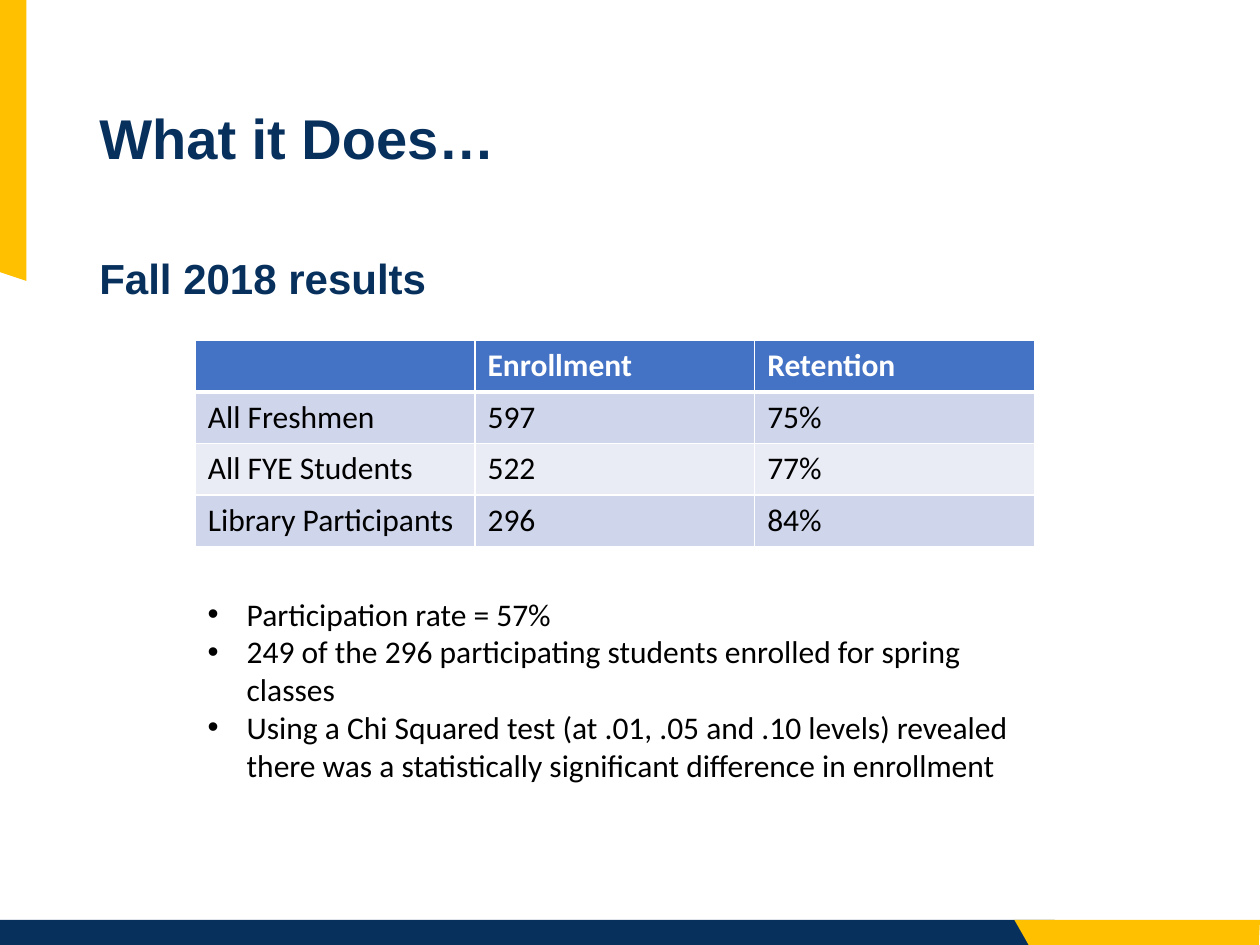
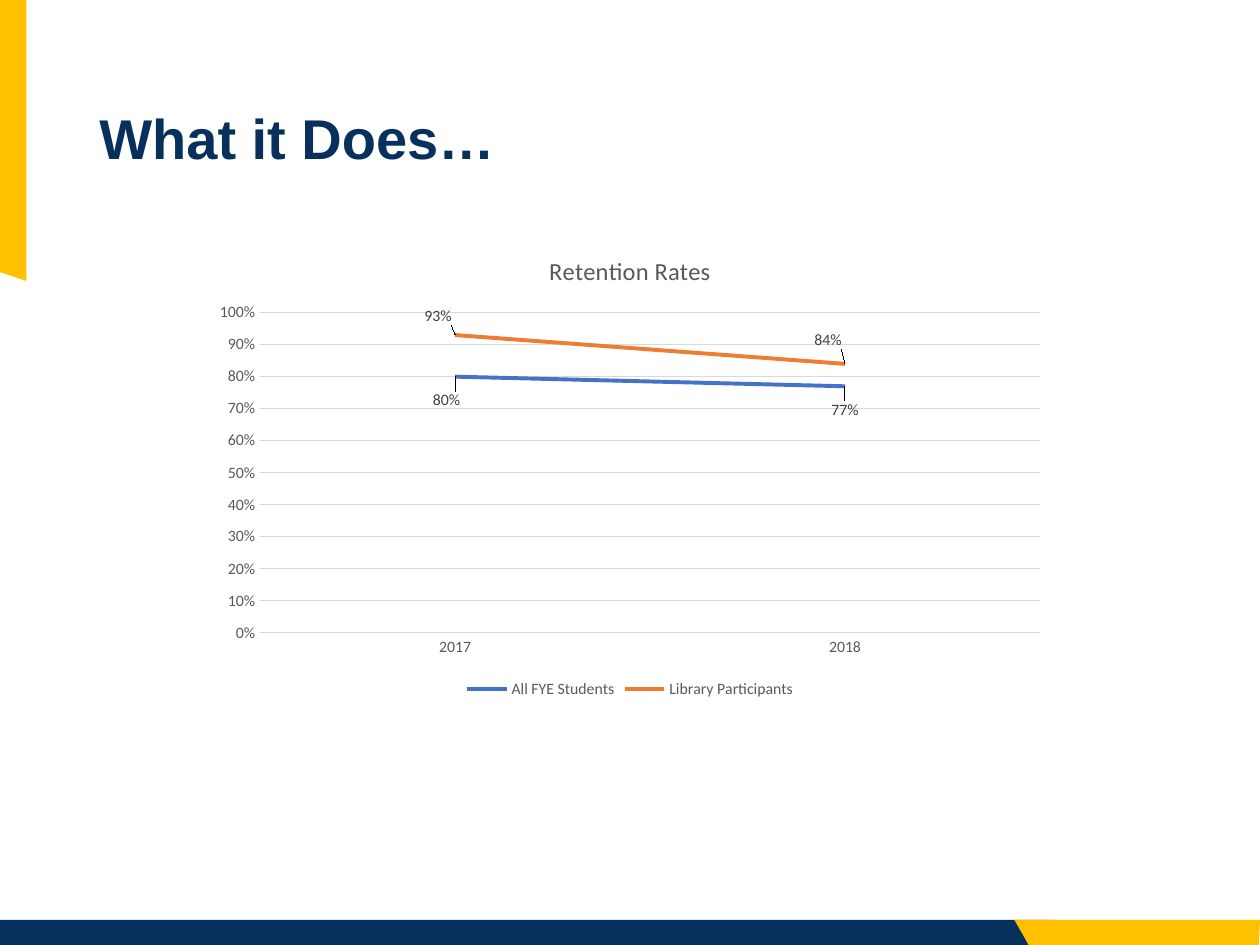
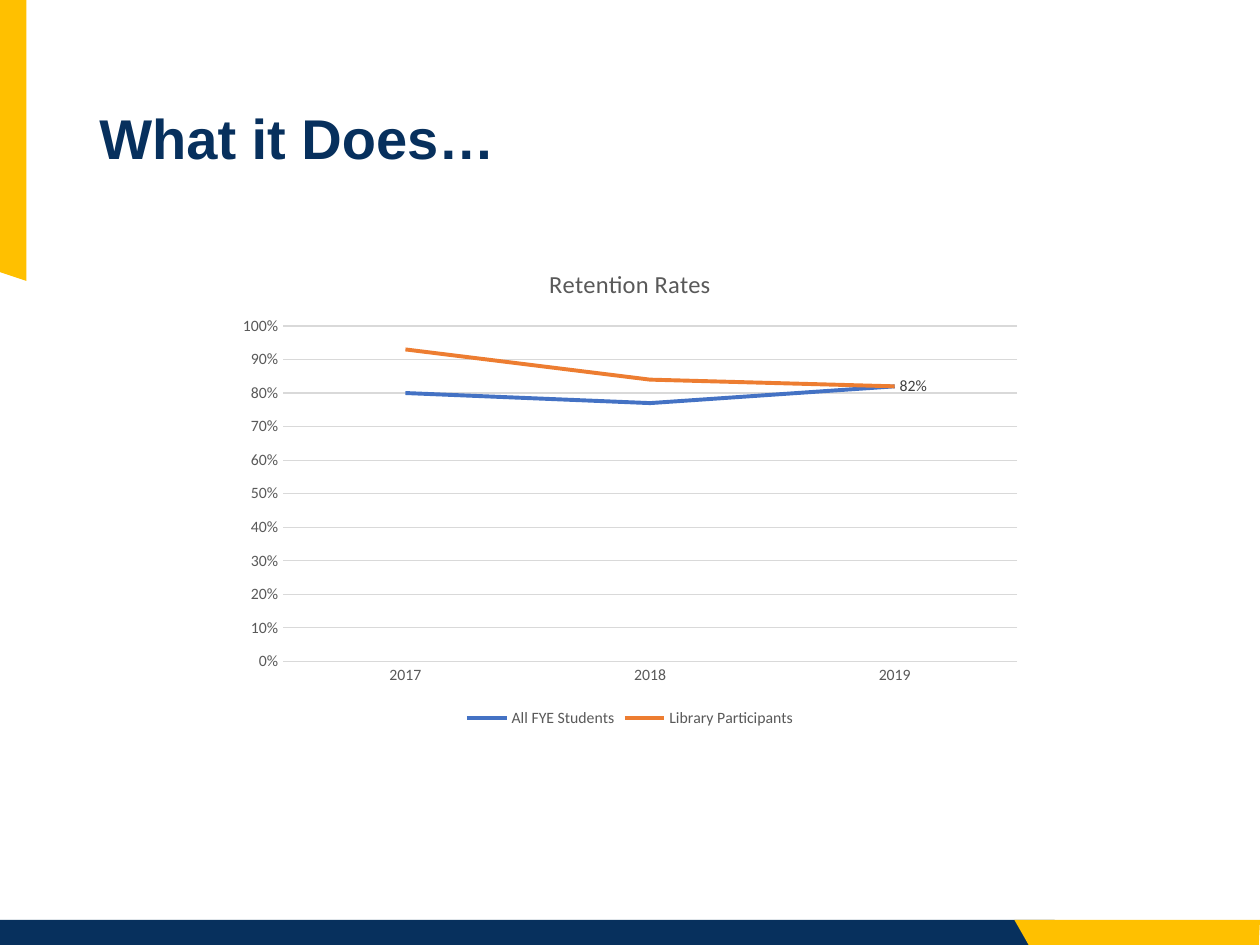
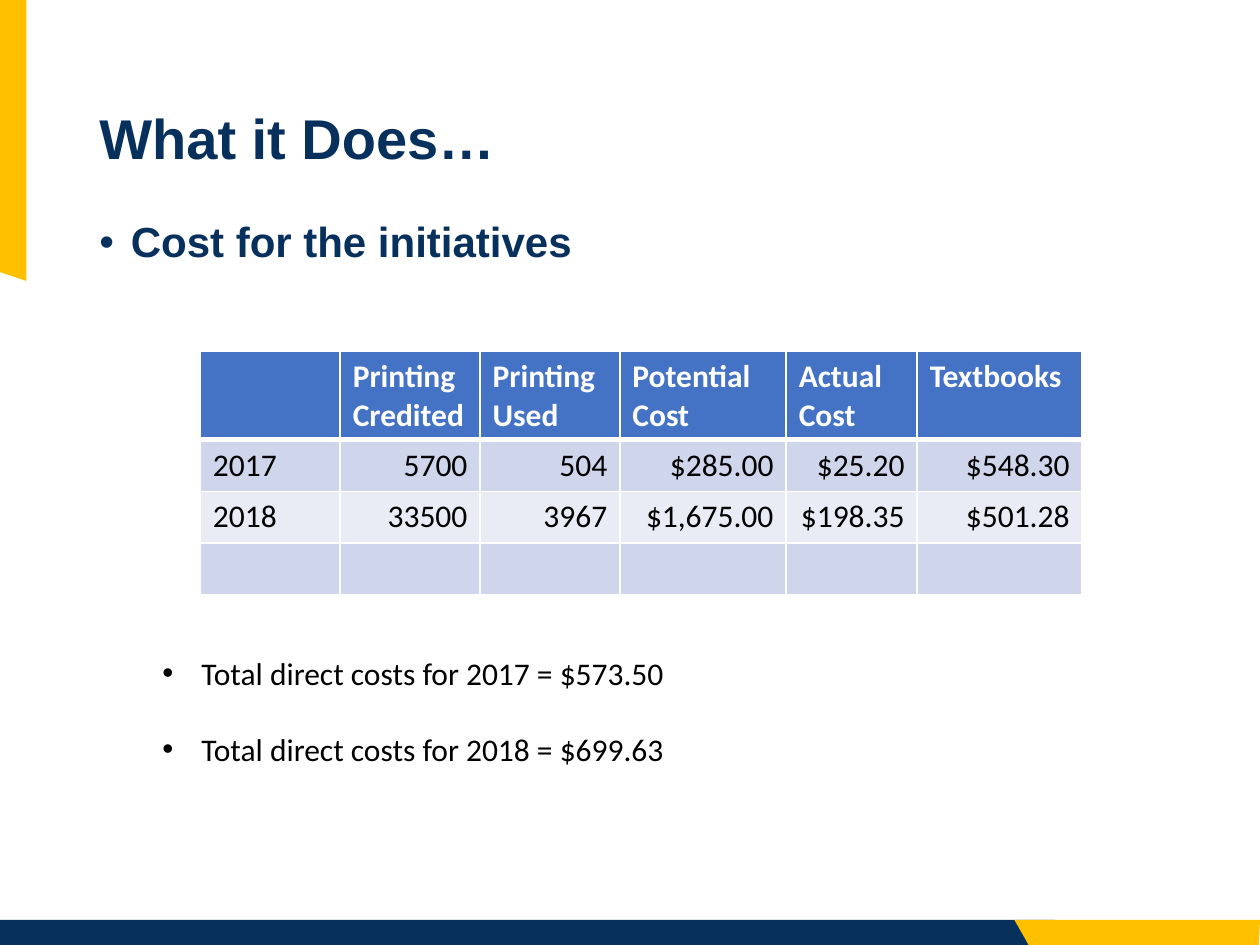
from lxml import etree
from pptx import Presentation
from pptx import util as u
from pptx.chart.data import CategoryChartData
from pptx.dml.color import RGBColor
from pptx.enum import chart as charts, shapes, text
from pptx.oxml import ns

Inches, Pt = u.Inches, u.Pt

NAVY, GOLD, WHITE, BLACK = "07305D", "FFC000", "FFFFFF", "000000"
BLUE, ORANGE, GRID, AXIS_TEXT, LABEL_TEXT = "4472C4", "ED7D31", "D9D9D9", "595959", "404040"
BODY_FILLS = ["CFD5EA", "E9EBF5"]

TITLE = {"name": "Arial", "size": 32, "bold": True, "color": NAVY}
SUBTITLE = {**TITLE, "size": 24}
BODY = {"name": "Calibri", "size": 18, "bold": False, "color": BLACK}
HEADER = {**BODY, "bold": True, "color": WHITE}
CHART_TITLE = {"name": "Calibri", "size": 14, "bold": False, "color": AXIS_TEXT}
AXIS = {**CHART_TITLE, "size": 9}
LABEL = {**AXIS, "color": LABEL_TEXT}

TITLE_TEXT = "What it Does…"
TITLE_BOX = (0.69, 0.4, 8.62, 1.45)
FOOTER_BAND = (0, 7.3, 8.37, 0.21)
GOLD_OUTLINES = [
    [(9.99, 7.51), (8.17, 7.51), (8.05, 7.3), (10, 7.3)],
    [(0, 0), (0.21, 0), (0.21, 2.23), (0, 2.16)],
]

RESULTS = [
    ["", "Enrollment", "Retention"],
    ["All Freshmen", "597", "75%"],
    ["All FYE Students", "522", "77%"],
    ["Library Participants", "296", "84%"],
]
RESULT_NOTES = [
    "Participation rate = 57%",
    "249 of the 296 participating students enrolled for spring classes",
    "Using a Chi Squared test (at .01, .05 and .10 levels) revealed there was "
    "a statistically significant difference in enrollment",
]
COSTS = [
    ["", "Printing Credited", "Printing Used", "Potential Cost", "Actual Cost", "Textbooks"],
    ["2017", "5700", "504", "$285.00", "$25.20", "$548.30"],
    ["2018", "33500", "3967", "$1,675.00", "$198.35", "$501.28"],
    [""] * 6,
]
COST_NOTES = [
    "Total direct costs for 2017 = $573.50",
    "Total direct costs for 2018 = $699.63",
]

ABOVE, BELOW, RIGHT = (getattr(charts.XL_LABEL_POSITION, side) for side in ("ABOVE", "BELOW", "RIGHT"))
# Labels: point index -> (position, horizontal shift, vertical shift) as chart fractions
RETENTION_CHARTS = [
    {
        "box": (1.61, 1.85, 6.78, 3.73),
        "years": ["2017", "2018"],
        "series": [
            ("All FYE Students", [0.8, 0.77], BLUE, {0: (BELOW, -0.01, 0.02), 1: (BELOW, 0, 0.02)}),
            ("Library Participants", [0.93, 0.84], ORANGE,
             {0: (ABOVE, -0.02, -0.01), 1: (ABOVE, -0.02, -0.02)}),
        ],
    },
    {
        "box": (1.8, 1.95, 6.4, 3.86),
        "years": ["2017", "2018", "2019"],
        "series": [
            ("All FYE Students", [0.8, 0.77, 0.82], BLUE, {}),
            ("Library Participants", [0.93, 0.84, 0.82], ORANGE, {2: (RIGHT, 0, 0)}),
        ],
    },
]


def rgb(color):
    return RGBColor.from_string(color)


def inches(values):
    return [Inches(value) for value in values]


def add_element(parent, tag, **attributes):
    return etree.SubElement(parent, ns.qn(tag), attributes)


def set_font(font, style):
    values = {"name": style["name"], "size": Pt(style["size"]), "bold": style["bold"]}
    for key, value in values.items():
        setattr(font, key, value)
    font.color.rgb = rgb(style["color"])


def paint(shape, color):
    shape.shadow.inherit = False
    shape.fill.solid()
    shape.fill.fore_color.rgb = rgb(color)
    shape.line.fill.background()


def add_bullet(paragraph, indent):
    properties = paragraph._p.get_or_add_pPr()
    properties.set("marL", str(Inches(indent)))
    properties.set("indent", str(-Inches(indent)))
    add_element(properties, "a:buFont", typeface="Arial")
    add_element(properties, "a:buChar", char="•")


def add_text(slide, box, lines, style, indent=0, gap=0, **paragraph_format):
    """Add a text box; a positive indent makes every line a bullet."""
    shape = slide.shapes.add_textbox(*inches(box))
    frame = shape.text_frame
    frame.word_wrap = True
    for index, line in enumerate(lines):
        paragraph = frame.add_paragraph() if index else frame.paragraphs[0]
        if indent:
            add_bullet(paragraph, indent)
        if index and gap:
            paragraph.space_before = Pt(gap)
        for key, value in paragraph_format.items():
            setattr(paragraph, key, value)
        run = paragraph.add_run()
        run.text = line
        set_font(run.font, style)
    return frame


def add_base_slide(presentation):
    """Add a slide with the bands and the title that all slides share."""
    slide = presentation.slides.add_slide(presentation.slide_layouts[6])
    band = slide.shapes.add_shape(shapes.MSO_SHAPE.RECTANGLE, *inches(FOOTER_BAND))
    paint(band, NAVY)
    for outline in GOLD_OUTLINES:
        start, *others = [inches(point) for point in outline]
        builder = slide.shapes.build_freeform(*start)
        builder.add_line_segments(others, close=True)
        paint(builder.convert_to_shape(), GOLD)
    frame = add_text(slide, TITLE_BOX, [TITLE_TEXT], TITLE, line_spacing=0.9)
    frame.vertical_anchor = text.MSO_ANCHOR.MIDDLE
    return slide


def add_borders(cell, row):
    properties = cell._tc.get_or_add_tcPr()
    widths = {"L": 1, "R": 1, "T": 3 if row == 1 else 1, "B": 3 if row == 0 else 1}
    for side, width in widths.items():
        line = add_element(properties, f"a:ln{side}", w=str(Pt(width)))
        add_element(add_element(line, "a:solidFill"), "a:srgbClr", val=WHITE)


def add_data_table(slide, left, top, widths, heights, rows, number_align):
    box = inches((left, top, sum(widths), sum(heights)))
    table = slide.shapes.add_table(len(rows), len(widths), *box).table
    for column, width in zip(table.columns, widths):
        column.width = Inches(width)
    for row, height in zip(table.rows, heights):
        row.height = Inches(height)
    for r, values in enumerate(rows):
        for c, value in enumerate(values):
            cell = table.cell(r, c)
            add_borders(cell, r)
            cell.fill.solid()
            cell.fill.fore_color.rgb = rgb(BODY_FILLS[(r - 1) % 2] if r else BLUE)
            paragraph = cell.text_frame.paragraphs[0]
            if r and c:
                paragraph.alignment = number_align
            if value:
                run = paragraph.add_run()
                run.text = value
                set_font(run.font, BODY if r else HEADER)


def shift_label(label, x, y):
    element = label._get_or_add_dLbl()
    layout = element.makeelement(ns.qn("c:layout"))
    manual = add_element(layout, "c:manualLayout")
    add_element(manual, "c:x", val=str(x))
    add_element(manual, "c:y", val=str(y))
    element.insert(1, layout)


def style_series(series, color, labels):
    series.smooth = False
    series.marker.style = charts.XL_MARKER_STYLE.NONE
    series.format.line.color.rgb = rgb(color)
    series.format.line.width = Pt(2.25)
    if labels:
        series.data_labels.show_value = False
    for index, (position, x, y) in labels.items():
        label = series.points[index].data_label
        set_font(label.font, LABEL)
        label.position = position
        if x or y:
            shift_label(label, x, y)


def style_axes(chart):
    for axis in (chart.category_axis, chart.value_axis):
        axis.major_tick_mark = axis.minor_tick_mark = charts.XL_TICK_MARK.NONE
        set_font(axis.tick_labels.font, AXIS)
    values = chart.value_axis
    scale = {"minimum_scale": 0, "maximum_scale": 1, "major_unit": 0.1}
    for key, value in scale.items():
        setattr(values, key, value)
    values.tick_labels.number_format = "0%"
    values.tick_labels.number_format_is_linked = False
    values.format.line.fill.background()
    for line in (chart.category_axis.format.line, values.major_gridlines.format.line):
        line.color.rgb = rgb(GRID)
        line.width = Pt(0.75)


def add_retention_chart(slide, box, years, series):
    data = CategoryChartData(number_format="0%")
    data.categories = years
    for name, values, _, _ in series:
        data.add_series(name, values)
    chart = slide.shapes.add_chart(charts.XL_CHART_TYPE.LINE, *inches(box), data).chart
    set_font(chart.font, {**BODY, "size": 10})
    chart.has_title = True
    paragraph = chart.chart_title.text_frame.paragraphs[0]
    run = paragraph.add_run()
    run.text = "Retention Rates"
    set_font(run.font, CHART_TITLE)
    chart.has_legend = True
    chart.legend.position = charts.XL_LEGEND_POSITION.BOTTOM
    chart.legend.include_in_layout = False
    set_font(chart.legend.font, AXIS)
    style_axes(chart)
    plot = chart.plots[0]
    plot.vary_by_categories = False
    for line, (_, _, color, labels) in zip(plot.series, series):
        style_series(line, color, labels)


def add_notes_list(slide, box, lines, gap=0):
    frame = add_text(slide, box, lines, BODY, indent=0.31, gap=gap)
    frame.auto_size = text.MSO_AUTO_SIZE.SHAPE_TO_FIT_TEXT


def main():
    presentation = Presentation()
    presentation.slide_width, presentation.slide_height = inches((10, 7.5))

    slide = add_base_slide(presentation)
    add_text(slide, (0.69, 2, 8.62, 0.55), ["Fall 2018 results"], SUBTITLE, line_spacing=0.9)
    add_data_table(slide, 1.55, 2.7, [2.22] * 3, [0.41] * 4, RESULTS, text.PP_ALIGN.LEFT)
    add_notes_list(slide, (1.55, 4.67, 6.67, 1.62), RESULT_NOTES)

    for retention in RETENTION_CHARTS:
        add_retention_chart(add_base_slide(presentation), **retention)

    slide = add_base_slide(presentation)
    add_text(slide, (0.69, 1.71, 8.7, 0.61), ["Cost for the initiatives"], SUBTITLE,
             indent=0.25, line_spacing=0.9)
    add_data_table(slide, 1.59, 2.79, [1.11, 1.11, 1.11, 1.32, 1.04, 1.31],
                   [0.7] + [0.41] * 3, COSTS, text.PP_ALIGN.RIGHT)
    add_notes_list(slide, (1.19, 5.14, 7.4, 1.31), COST_NOTES, gap=22)

    presentation.save("out.pptx")


if __name__ == "__main__":
    main()
